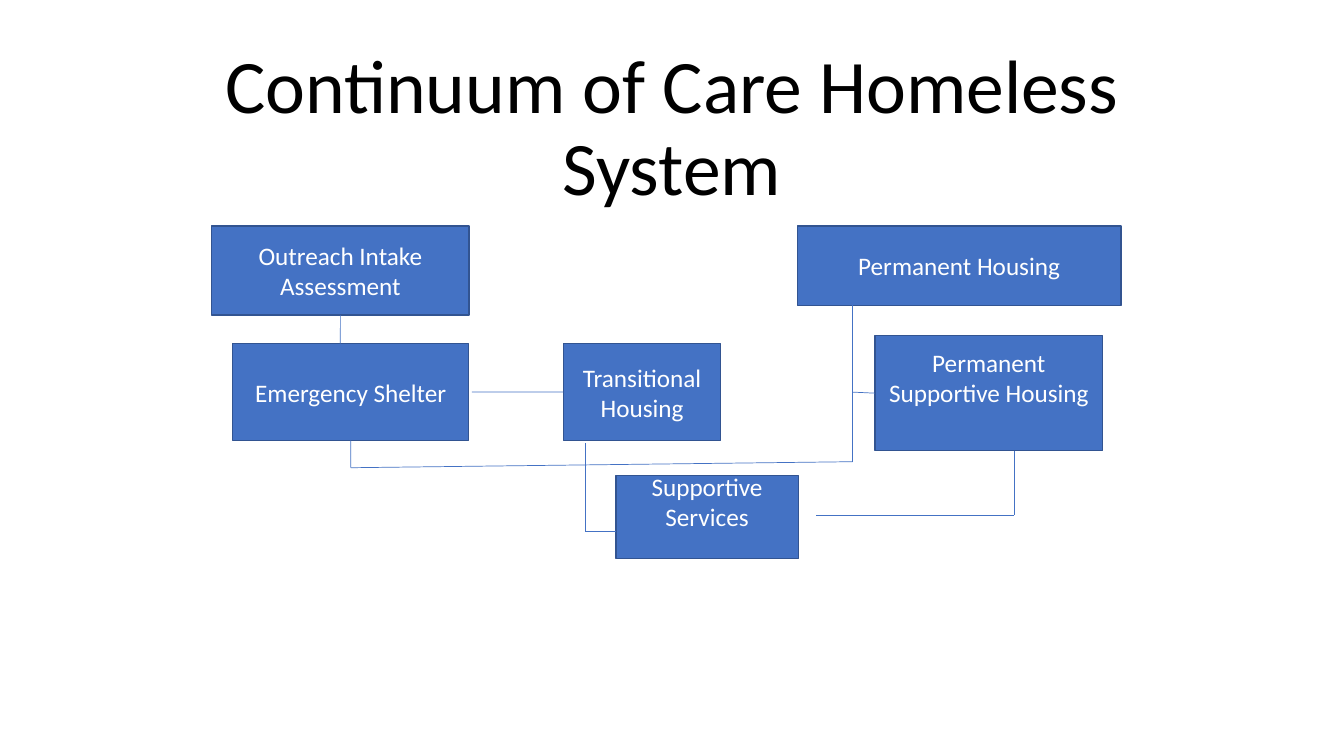
"""Build the Continuum of Care Homeless System slide."""
from lxml import etree
from pptx import Presentation
from pptx.dml.color import RGBColor
from pptx.enum import shapes, text
from pptx.oxml import ns
from pptx.util import Pt

TITLE = "Continuum of Care Homeless System"
TITLE_AREA = (70.6, 36, 818.6, 118.8)
FONT = "Calibri"
BLUE, EDGE, WHITE, BLACK = "4472C4", "325491", "FFFFFF", "000000"
INSET, TEXT_LINE = 3.6, 22

# name: (text, left, top, width, height, lines of space below the text)
BOXES = {
    "outreach": ("Outreach Intake Assessment", 151.2, 161.3, 183.9, 63.7, 0),
    "permanent": ("Permanent Housing", 569.5, 161.3, 231.3, 56.9, 0),
    "emergency": ("Emergency Shelter", 166.3, 245.5, 168.5, 69.1, 0),
    "transitional": ("Transitional Housing", 402.5, 245.5, 112.3, 69.1, 0),
    "supportive housing": ("Permanent Supportive Housing", 625, 239.8, 162.7, 82.1, 1),
    "services": ("Supportive Services", 439.9, 339.8, 130.3, 59, 1),
}

BOTTOM, LEFT = 2, 1
# start, end, joined box at start, joined box at end
LINES = [
    ((243.1, 225), (243.1, 245.5), ("outreach", BOTTOM), None),
    ((337, 280), (402.5, 280), None, ("transitional", LEFT)),
    ((250.6, 314.6), (250.6, 334.1), ("emergency", BOTTOM), None),
    ((250.6, 334.1), (609.1, 329.8), None, None),
    ((418, 379.4), (418, 316.1), None, None),
    ((418, 379.4), (439.9, 379.4), None, None),
    ((609.1, 329.8), (609.1, 218.2), None, None),
    ((609.1, 280.1), (625, 280.8), None, ("supportive housing", LEFT)),
    ((583.2, 367.9), (724.3, 367.9), None, None),
    ((724.3, 367.9), (724.3, 321.9), None, None),
]


def color(value):
    return RGBColor.from_string(value)


def write(frame, content, size, font_color, anchor):
    frame.text = content
    frame.word_wrap = True
    frame.auto_size = text.MSO_AUTO_SIZE.NONE
    frame.vertical_anchor = anchor
    paragraph = frame.paragraphs[0]
    paragraph.alignment = text.PP_ALIGN.CENTER
    font = paragraph.runs[0].font
    font.name, font.size = FONT, Pt(size)
    font.color.rgb = color(font_color)
    return paragraph


def add_title(slide):
    title = slide.shapes.title
    title.left, title.top, title.width, title.height = map(Pt, TITLE_AREA)
    paragraph = write(title.text_frame, TITLE, 54, BLACK, text.MSO_ANCHOR.BOTTOM)
    paragraph.line_spacing = 0.9
    subtitle = slide.placeholders[1].element
    subtitle.getparent().remove(subtitle)


def add_box(slide, label, left, top, width, height, lines_below):
    box = slide.shapes.add_shape(
        shapes.MSO_SHAPE.RECTANGLE, Pt(left), Pt(top), Pt(width), Pt(height))
    box.shadow.inherit = False
    box.fill.solid()
    box.fill.fore_color.rgb = color(BLUE)
    box.line.color.rgb = color(EDGE)
    box.line.width = Pt(1)
    write(box.text_frame, label, 18, WHITE, text.MSO_ANCHOR.MIDDLE)
    box.text_frame.margin_bottom = Pt(INSET + lines_below * TEXT_LINE)
    return box


def add_line(slide, boxes, start, end, start_join, end_join):
    line = slide.shapes.add_connector(
        shapes.MSO_CONNECTOR.STRAIGHT, *map(Pt, start + end))
    line.line.color.rgb = color(BLUE)
    line.line.width = Pt(0.5)
    etree.SubElement(line.element.spPr, ns.qn("a:effectLst"))
    if start_join:
        name, side = start_join
        line.begin_connect(boxes[name], side)
    if end_join:
        name, side = end_join
        line.end_connect(boxes[name], side)


def main():
    presentation = Presentation()
    presentation.slide_width, presentation.slide_height = Pt(960), Pt(540)
    slide = presentation.slides.add_slide(presentation.slide_layouts[0])
    add_title(slide)
    boxes = {name: add_box(slide, *details) for name, details in BOXES.items()}
    for details in LINES:
        add_line(slide, boxes, *details)
    presentation.save("out.pptx")


if __name__ == "__main__":
    main()
